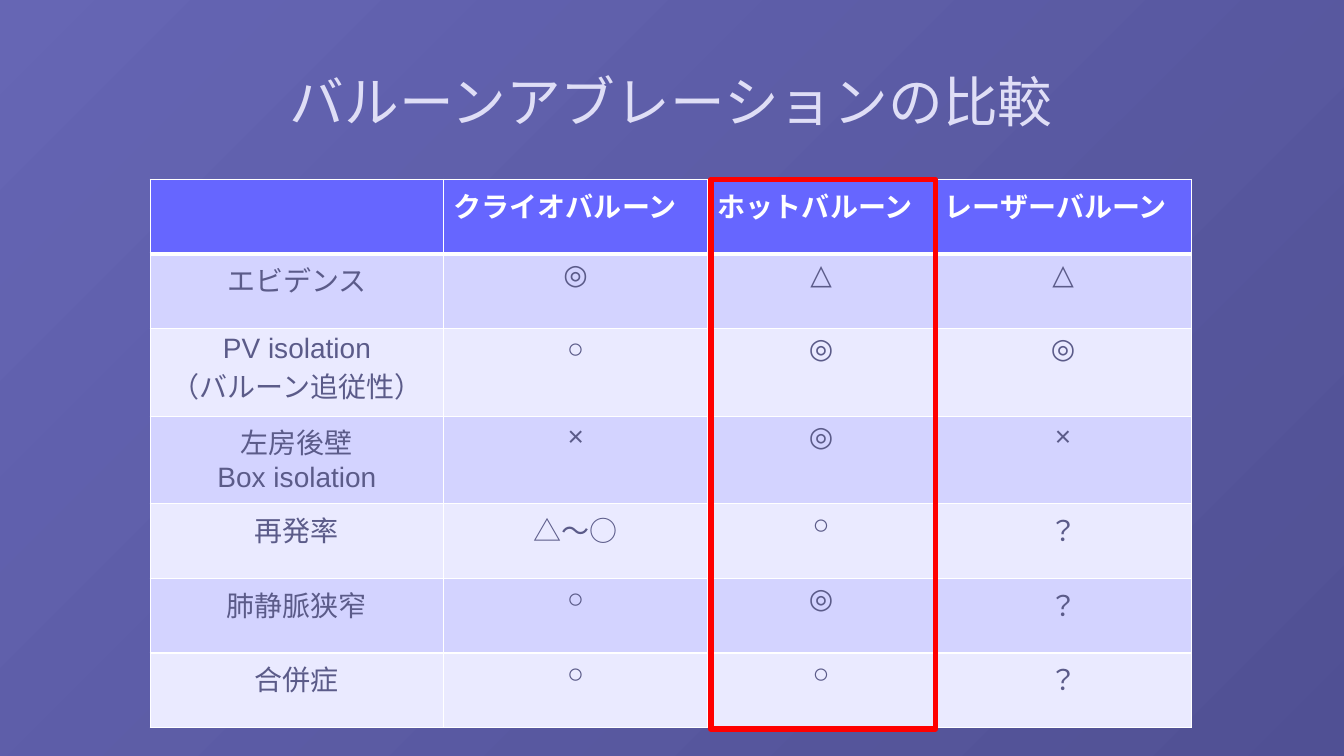
from lxml import etree
from pptx import Presentation
from pptx.dml.color import RGBColor
from pptx.enum.shapes import MSO_SHAPE
from pptx.enum.text import MSO_ANCHOR, PP_ALIGN
from pptx.oxml.ns import qn
from pptx.util import Inches, Pt

RECT = MSO_SHAPE.RECTANGLE
LEFT, CENTER = PP_ALIGN.LEFT, PP_ALIGN.CENTER
MIDDLE = MSO_ANCHOR.MIDDLE

LATIN, JAPANESE = "Arial", "Noto Sans CJK JP"
WHITE, VIOLET, INK = "FFFFFF", "6666FF", "5B5B89"
BANDS = ["D3D3FF", "EAEAFF"]
TABLE_LEFT, TABLE_TOP = 1.49, 1.78
COL_WIDTHS = [2.91, 2.62, 2.25, 2.55]
LINE_HEIGHTS = {1: 0.74, 2: 0.87}
ROWS = [
    ["", "クライオバルーン", "ホットバルーン", "レーザーバルーン"],
    ["エビデンス", "◎", "△", "△"],
    ["PV isolation\n（バルーン追従性）", "○", "◎", "◎"],
    ["左房後壁\nBox isolation", "×", "◎", "×"],
    ["再発率", "△～○", "○", "？"],
    ["肺静脈狭窄", "○", "◎", "？"],
    ["合併症", "○", "○", "？"],
]


def rgb(color):
    return RGBColor.from_string(color)


def add_text(p, text, size, color, font, align, bold=False):
    p.alignment = align
    r = p.add_run()
    r.text = text
    r.font.size = Pt(size)
    r.font.bold = bold
    r.font.name = font
    r.font.color.rgb = rgb(color)
    ea = etree.SubElement(r.font._element, qn("a:ea"))
    ea.set("typeface", JAPANESE)


def set_background(s):
    fill = s.background.fill
    fill.gradient()
    fill.gradient_angle = 315
    for stop, color in zip(fill.gradient_stops, ["666699", "49496D"]):
        stop.color.rgb = rgb(color)


def add_rect(s, left, top, width, height):
    sp = s.shapes.add_shape(RECT, Inches(left), Inches(top), Inches(width), Inches(height))
    sp.shadow.inherit = False
    return sp


def add_tint(s, opacity):
    sp = add_rect(s, 0, 0, 13.33, 7.5)
    sp.fill.solid()
    sp.fill.fore_color.rgb = rgb(VIOLET)
    sp.line.fill.background()
    color = sp.fill._xPr.find(qn("a:solidFill"))[0]
    etree.SubElement(color, qn("a:alpha")).set("val", str(opacity * 1000))


def add_title(s, text):
    sp = s.shapes.add_textbox(Inches(2.35), Inches(0.27), Inches(8.62), Inches(1.45))
    tf = sp.text_frame
    tf.word_wrap = True
    tf.vertical_anchor = MIDDLE
    add_text(tf.paragraphs[0], text, 39.1, "DFDEF6", JAPANESE, CENTER)


def set_borders(cell, widths):
    tcPr = cell._tc.get_or_add_tcPr()
    for side, width in widths.items():
        ln = etree.SubElement(tcPr, qn(f"a:ln{side}"), w=str(Pt(width)))
        fill = etree.SubElement(ln, qn("a:solidFill"))
        etree.SubElement(fill, qn("a:srgbClr"), val=WHITE)


def fill_cell(cell, text, row):
    header = row == 0
    set_borders(cell, {"L": 1, "R": 1, "T": 3 if row == 1 else 1, "B": 3 if header else 1})
    cell.fill.solid()
    cell.fill.fore_color.rgb = rgb(VIOLET if header else BANDS[(row - 1) % 2])
    if not text:
        return
    tf = cell.text_frame
    for i, line in enumerate(text.split("\n")):
        p = tf.add_paragraph() if i else tf.paragraphs[0]
        add_text(p, line, 20, WHITE if header else INK, LATIN,
                 LEFT if header else CENTER, header)


def add_comparison(s):
    heights = [LINE_HEIGHTS[row[0].count("\n") + 1] for row in ROWS]
    frame = s.shapes.add_table(len(ROWS), len(COL_WIDTHS), Inches(TABLE_LEFT), Inches(TABLE_TOP),
                               Inches(sum(COL_WIDTHS)), Inches(sum(heights)))
    table = frame.table
    table.horz_banding = False
    for column, width in zip(table.columns, COL_WIDTHS):
        column.width = Inches(width)
    for i, (row, height) in enumerate(zip(ROWS, heights)):
        table.rows[i].height = Inches(height)
        for j, text in enumerate(row):
            fill_cell(table.cell(i, j), text, i)


def add_highlight(s):
    sp = add_rect(s, 7.05, TABLE_TOP, 2.23, 5.45)
    sp.fill.background()
    sp.line.color.rgb = rgb("FF0000")
    sp.line.width = Pt(4)


def main():
    prs = Presentation()
    prs.slide_width, prs.slide_height = Inches(13.33), Inches(7.5)
    s = prs.slides.add_slide(prs.slide_layouts[6])
    # Backdrop
    set_background(s)
    add_tint(s, 27)
    # Title and comparison table
    add_title(s, "バルーンアブレーションの比較")
    add_comparison(s)
    # Frame around the hot balloon column
    add_highlight(s)
    prs.save("out.pptx")


if __name__ == "__main__":
    main()
